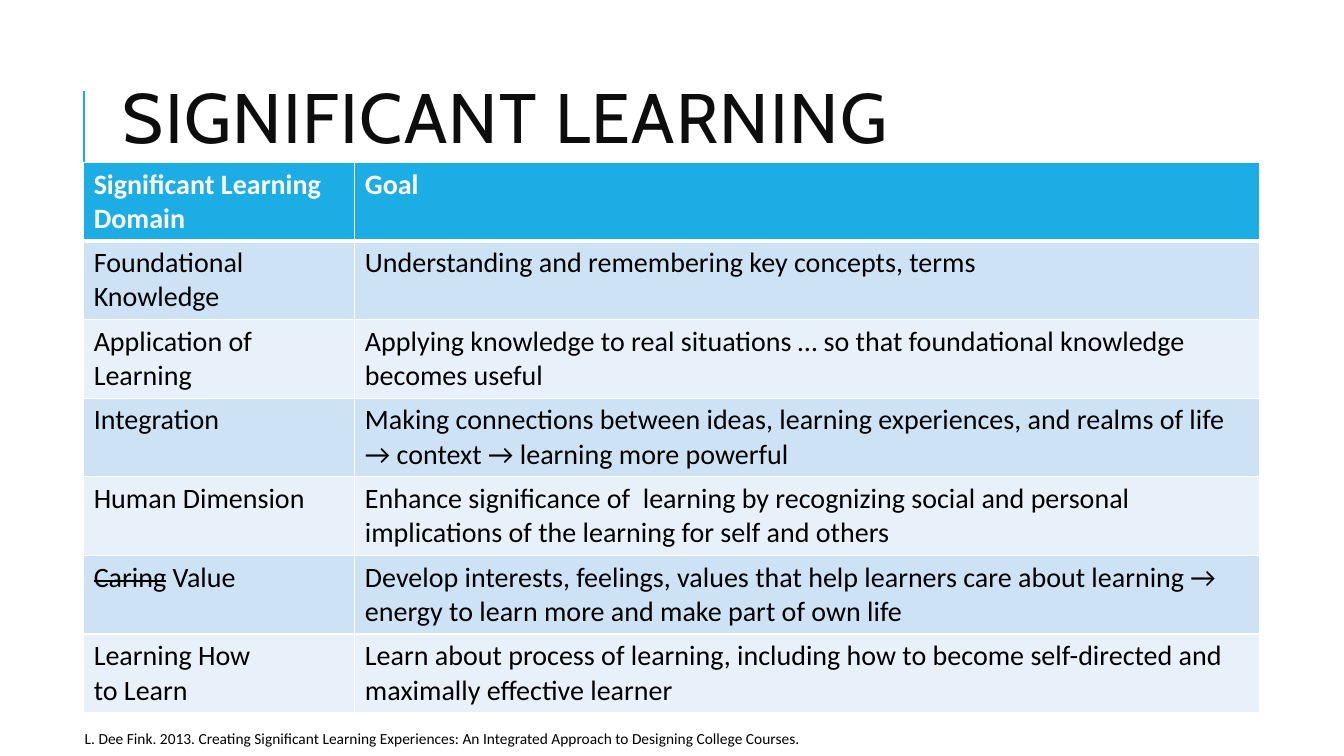
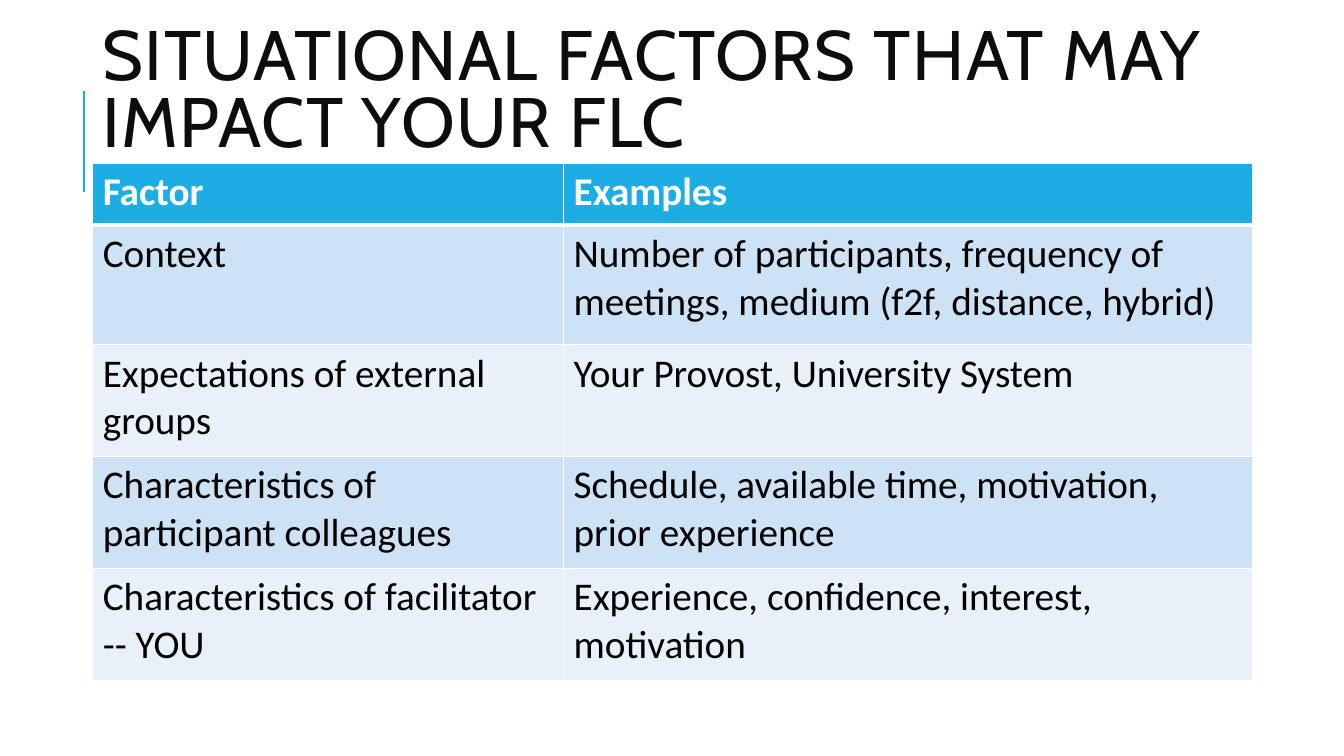
from lxml import etree
from pptx import Presentation
from pptx.dml.color import RGBColor
from pptx.enum.shapes import MSO_CONNECTOR
from pptx.enum.text import MSO_ANCHOR
from pptx.oxml.ns import qn
from pptx.util import Inches, Pt

STRAIGHT = MSO_CONNECTOR.STRAIGHT
MIDDLE = MSO_ANCHOR.MIDDLE
TOP = MSO_ANCHOR.TOP

LEARNING_ROWS = [
    ("Significant Learning\nDomain", "Goal"),
    ("Foundational Knowledge", "Understanding and remembering key concepts, terms"),
    ("Application of\nLearning",
     "Applying knowledge to real situations … so that foundational knowledge becomes useful"),
    ("Integration",
     "Making connections between ideas, learning experiences, and realms of life "
     "→ context → learning more powerful"),
    ("Human Dimension",
     "Enhance significance of  learning by recognizing social and personal "
     "implications of the learning for self and others"),
    ("~Caring~ Value",
     "Develop interests, feelings, values that help learners care about learning "
     "→ energy to learn more and make part of own life"),
    ("Learning How\nto Learn",
     "Learn about process of learning, including how to become self-directed and "
     "maximally effective learner"),
]

FACTOR_ROWS = [
    ("Factor", "Examples"),
    ("Context",
     "Number of participants, frequency of meetings, medium (f2f, distance, hybrid)"),
    ("Expectations of external groups", "Your Provost, University System"),
    ("Characteristics of participant colleagues",
     "Schedule, available time, motivation, prior experience"),
    ("Characteristics of facilitator -- YOU",
     "Experience, confidence, interest, motivation"),
]


def rgb(value):
    return RGBColor.from_string(value)


class Deck:
    ACCENT, WHITE, BLACK, INK = "1CADE4", "FFFFFF", "000000", "0D0D0D"
    BANDS = ("E8F1FA", "CDE3F5")
    HEAD_FONT, BODY_FONT = "Cabin", "Calibri"

    def __init__(self):
        self.prs = Presentation()
        self.prs.slide_width = Inches(13.33)
        self.prs.slide_height = Inches(7.5)
        self.s = None

    def new_slide(self):
        self.s = self.prs.slides.add_slide(self.prs.slide_layouts[6])
        fill = self.s.background.fill
        fill.solid()
        fill.fore_color.rgb = rgb(self.WHITE)
        self.accent_line()

    def accent_line(self):
        line = self.s.shapes.add_connector(
            STRAIGHT, Inches(0.83), Inches(1.9), Inches(0.83), Inches(0.9))
        line.line.color.rgb = rgb(self.ACCENT)
        line.line.width = Pt(1.5)
        etree.SubElement(line._element.spPr, qn("a:effectLst"))

    def add_run(self, p, text, color, **fmt):
        r = p.add_run()
        r.text = text
        for name, value in fmt.items():
            setattr(r.font, name, value)
        r.font.color.rgb = rgb(color)
        return r

    def text_box(self, x, y, w, h, **frame):
        tf = self.s.shapes.add_textbox(
            Inches(x), Inches(y), Inches(w), Inches(h)).text_frame
        tf.word_wrap = True
        for name, value in frame.items():
            setattr(tf, name, value)
        return tf.paragraphs[0]

    def title(self, text, x, y, w, h):
        p = self.text_box(x, y, w, h, vertical_anchor=MIDDLE)
        p.line_spacing = 0.8
        r = self.add_run(p, text, self.INK, name=self.HEAD_FONT, size=Pt(50))
        r._r.get_or_add_rPr().set("spc", "100")

    def citation(self, text):
        inset = Inches(0.05)
        p = self.text_box(0.23, 7.18, 11.85, 0.48, vertical_anchor=TOP,
                          margin_left=Inches(0.61), margin_right=inset,
                          margin_top=inset, margin_bottom=inset)
        p.space_after = Pt(4)
        self.add_run(p, text, self.BLACK, name=self.BODY_FONT, size=Pt(11))

    def border(self, cell, side, width):
        ln = etree.SubElement(cell._tc.get_or_add_tcPr(), qn("a:ln" + side),
                              w=str(Pt(width)))
        fill = etree.SubElement(ln, qn("a:solidFill"))
        etree.SubElement(fill, qn("a:srgbClr"), val=self.WHITE)

    def cell(self, cell, text, row, size):
        header = row == 0
        widths = {"L": 1, "R": 1, "T": 3 if row == 1 else 1, "B": 3 if header else 1}
        for side, width in widths.items():
            self.border(cell, side, width)
        cell.fill.solid()
        cell.fill.fore_color.rgb = rgb(self.ACCENT if header else self.BANDS[row % 2])
        tf = cell.text_frame
        for i, line in enumerate(text.split("\n")):
            p = tf.add_paragraph() if i else tf.paragraphs[0]
            for j, part in enumerate(line.split("~")):
                if not part:
                    continue
                r = self.add_run(p, part, self.WHITE if header else self.BLACK,
                                 name=self.BODY_FONT, size=Pt(size), bold=header)
                if j % 2:
                    r._r.get_or_add_rPr().set("strike", "sngStrike")

    def table(self, rows, x, y, widths, heights, size):
        table = self.s.shapes.add_table(
            len(rows), len(widths), Inches(x), Inches(y),
            Inches(sum(widths)), Inches(sum(heights))).table
        for column, width in zip(table.columns, widths):
            column.width = Inches(width)
        for i, (texts, height) in enumerate(zip(rows, heights)):
            table.rows[i].height = Inches(height)
            for j, text in enumerate(texts):
                self.cell(table.cell(i, j), text, i, size)


def main():
    deck = Deck()

    deck.new_slide()
    deck.title("SIGNIFICANT LEARNING", 1.12, 0.64, 10.63, 1.17)
    deck.citation("L. Dee Fink. 2013. Creating Significant Learning Experiences: "
                  "An Integrated Approach to Designing College Courses.")
    deck.table(LEARNING_ROWS, 0.83, 1.61, [2.69, 8.97], [0.78] * 7, 20)

    deck.new_slide()
    deck.title("SITUATIONAL FACTORS THAT MAY IMPACT YOUR FLC", 0.92, 0.4, 11.5, 1.06)
    deck.table(FACTOR_ROWS, 0.92, 1.62, [4.67, 6.83], [0.61, 1.19] + [1.11] * 3, 28)

    deck.prs.save("out.pptx")


if __name__ == "__main__":
    main()
